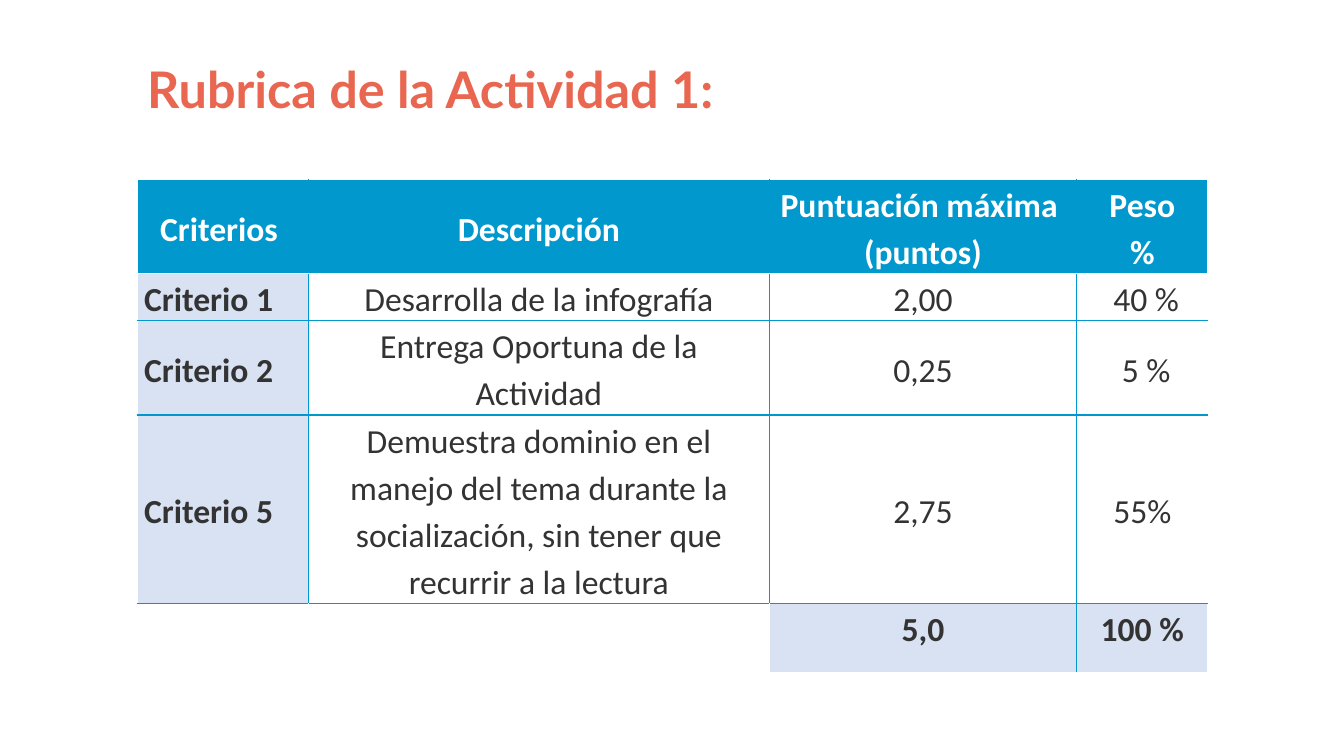
from lxml import etree
from pptx import Presentation
from pptx.dml.color import RGBColor
from pptx.enum import text
from pptx.oxml import ns
from pptx.util import Inches, Pt

# Content
TITLE = "Rubrica de la Actividad 1:"
ROWS = [
    ("Criterios ", "Descripción", "Puntuación máxima \n(puntos)", "Peso\n%"),
    ("Criterio 1", "Desarrolla de la infografía", "2,00", " 40 %"),
    ("Criterio 2", "Entrega Oportuna de la Actividad", "0,25", " 5 %"),
    ("Criterio 5", "Demuestra dominio en el manejo del tema durante la "
     "socialización, sin tener que recurrir a la lectura", "2,75", "55%"),
    ("", "", "5,0", "100 %"),
]
WIDTHS = [1.7, 4.57, 3.05, 1.3]
HEIGHTS = [0.92, 0.46, 0.92, 1.84, 0.69]
COLORS = {"title": "E96750", "blue": "0098CD", "pale": "D9E2F3",
          "ink": "333333", "white": "FFFFFF"}
ALIGN = text.PP_ALIGN
ANCHOR = text.MSO_ANCHOR


def write(frame, words, size=24, font="Calibri", color="ink", bold=False,
          align=ALIGN.CENTER, space=None, mark=None):
    frame.text = words
    for par in frame.paragraphs:
        par.alignment = align
        par.line_spacing = space
        for run in par.runs:
            run.font.size = Pt(size)
            run.font.name = font
            run.font.bold = bold
            run.font.color.rgb = RGBColor.from_string(COLORS[color])
            if mark:
                glow = etree.Element(ns.qn("a:highlight"))
                etree.SubElement(glow, ns.qn("a:srgbClr"), val=COLORS[mark])
                run.font._element.find(ns.qn("a:solidFill")).addnext(glow)


def edge(cell, sides):
    props = cell._tc.get_or_add_tcPr()
    for i, (side, color) in enumerate(sides.items()):
        line = etree.Element(ns.qn("a:ln" + side), w=str(Pt(1)))
        fill = etree.SubElement(line, ns.qn("a:solidFill"))
        etree.SubElement(fill, ns.qn("a:srgbClr"), val=COLORS[color])
        props.insert(i, line)


deck = Presentation()
deck.slide_width, deck.slide_height = Inches(13.33), Inches(7.5)
slide = deck.slides.add_slide(deck.slide_layouts[5])

# Title
title = slide.shapes.title
title.left, title.top = Inches(1.36), Inches(0.53)
title.width, title.height = Inches(7.69), Inches(0.71)
title.text_frame.vertical_anchor = ANCHOR.TOP
write(title.text_frame, TITLE, size=36, font="Lato", color="title",
      bold=True, align=ALIGN.LEFT)

# Table
grid = slide.shapes.add_table(
    len(ROWS), len(WIDTHS), Inches(1.36), Inches(1.78),
    Inches(sum(WIDTHS)), Inches(sum(HEIGHTS))).table
grid.first_row = grid.horz_banding = False
for col, width in zip(grid.columns, WIDTHS):
    col.width = Inches(width)
for row, height in zip(grid.rows, HEIGHTS):
    row.height = Inches(height)

# Cells: blue header, pale first column and totals, white outer edges
last, end = len(ROWS) - 1, len(WIDTHS) - 1
for r, row in enumerate(ROWS):
    for c, words in enumerate(row):
        cell = grid.cell(r, c)
        head, foot = r == 0, r == last
        blank = foot and not words
        side = c == 0 and not head
        shade = "blue" if head else "pale" if words and (side or foot) else None

        cell.margin_left = cell.margin_right = Inches(0.07)
        cell.margin_top = cell.margin_bottom = 0
        top = foot or (c == 1 and not head)
        cell.vertical_anchor = ANCHOR.TOP if top else ANCHOR.MIDDLE
        write(cell.text_frame, words, color="white" if head else "ink",
              bold=bool(shade), space=1.15, mark=shade,
              align=ALIGN.LEFT if side else ALIGN.CENTER)

        if shade:
            cell.fill.solid()
            cell.fill.fore_color.rgb = RGBColor.from_string(COLORS[shade])
        else:
            cell.fill.background()
        outer = {"L": c == 0 or (foot and c <= 2), "R": c == end or blank,
                 "T": r <= 1, "B": head or foot}
        edge(cell, {k: "white" if v else "blue" for k, v in outer.items()})

deck.save("out.pptx")
